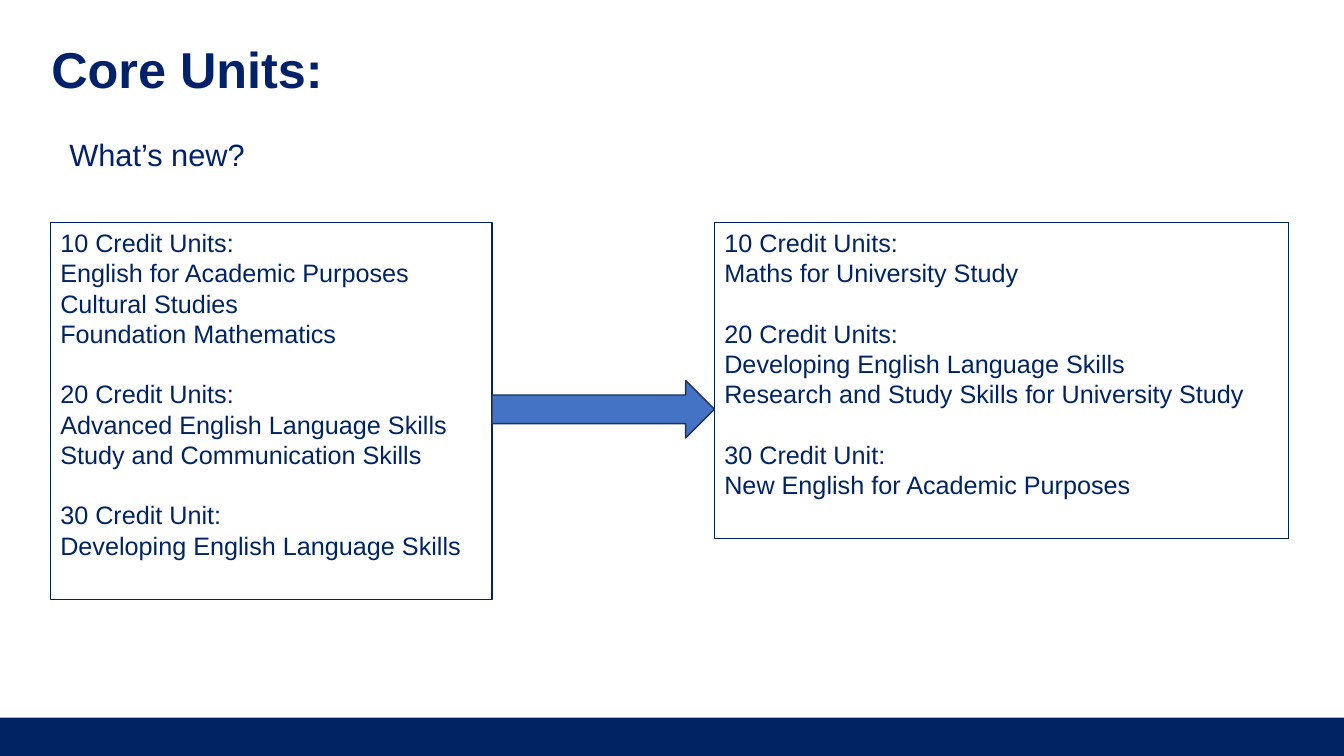
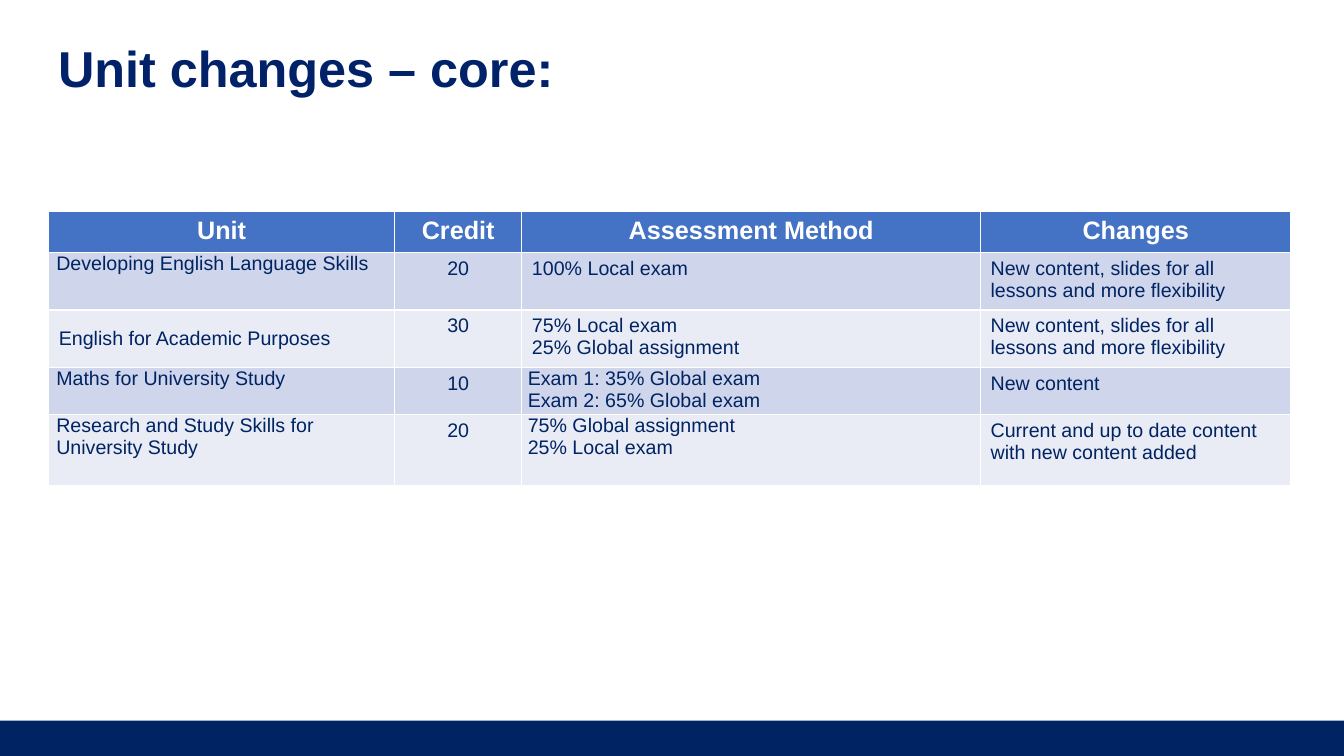
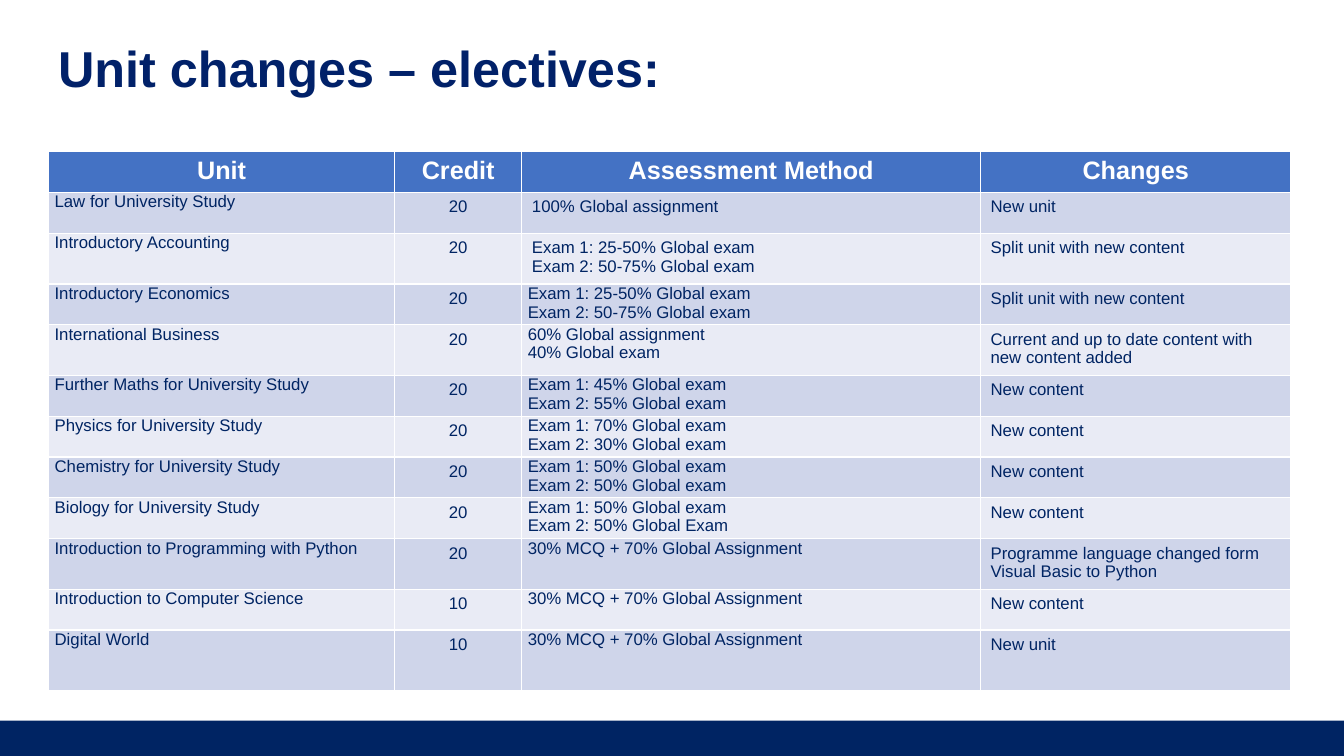
"""Build three slides on unit changes: core overview, core table, electives table."""
from dataclasses import dataclass

from pptx import Presentation
from pptx.dml.color import RGBColor as RGB
from pptx.enum.shapes import MSO_SHAPE as SHAPE
from pptx.enum.text import MSO_ANCHOR as ANCHOR, PP_ALIGN as ALIGN
from pptx.util import Pt


@dataclass(frozen=True)
class Theme:
    font: str = "Arial"
    title_ink: RGB = RGB(0x01, 0x21, 0x69)
    navy: RGB = RGB(0x00, 0x24, 0x63)
    blue: RGB = RGB(0x44, 0x72, 0xC4)
    arrow_edge: RGB = RGB(0x1E, 0x32, 0x56)
    stripes: tuple = (RGB(0xCF, 0xD5, 0xEA), RGB(0xE9, 0xEB, 0xF5))
    white: RGB = RGB(0xFF, 0xFF, 0xFF)
    title_size: int = 36
    question_size: int = 22
    body_size: int = 18
    line_pitch: float = 21.6


THEME = Theme()
WIDTH, HEIGHT = 960, 540

OLD_UNITS = [
    ("10 Credit Units:", "English for Academic Purposes", "Cultural Studies",
     "Foundation Mathematics"),
    ("20 Credit Units:", "Advanced English Language Skills",
     "Study and Communication Skills"),
    ("30 Credit Unit:", "Developing English Language Skills"),
]
NEW_UNITS = [
    ("10 Credit Units:", "Maths for University Study"),
    ("20 Credit Units:", "Developing English Language Skills",
     "Research and Study Skills for University Study"),
    ("30 Credit Unit:", "New English for Academic Purposes"),
]
UNIT_BOXES = [(OLD_UNITS, (36, 159, 315.5, 269.3)), (NEW_UNITS, (510.3, 159, 410.2, 225.4))]

HEADINGS = ("Unit", "Credit", "Assessment Method", "Changes")
COLUMN_WIDTHS = (247, 91, 327.6, 221.8)
SPLIT_EXAM = "Exam 1: 25-50% Global exam\nExam 2: 50-75% Global exam"
HALF_EXAM = "Exam 1: 50% Global exam\nExam 2: 50% Global exam"
MCQ = "30% MCQ + 70% Global Assignment"
FLEXIBLE = "New content, slides for all lessons and more flexibility"
UPDATED = "Current and up to date content with new content added"

CORE = [
    ("Developing English Language Skills", "20", "100% Local exam", FLEXIBLE),
    ("English for Academic Purposes", "30", "75% Local exam\n25% Global assignment", FLEXIBLE),
    ("Maths for University Study", "10",
     "Exam 1: 35% Global exam\nExam 2: 65% Global exam", "New content"),
    ("Research and Study Skills for University Study", "20",
     "75% Global assignment\n25% Local exam", UPDATED),
]
ELECTIVES = [
    ("Law for University Study", "20", "100% Global assignment", "New unit"),
    ("Introductory Accounting", "20", SPLIT_EXAM, "Split unit with new content"),
    ("Introductory Economics", "20", SPLIT_EXAM, "Split unit with new content"),
    ("International Business", "20", "60% Global assignment\n40% Global exam", UPDATED),
    ("Further Maths for University Study", "20",
     "Exam 1: 45% Global exam\nExam 2: 55% Global exam", "New content"),
    ("Physics for University Study", "20",
     "Exam 1: 70% Global exam\nExam 2: 30% Global exam", "New content"),
    ("Chemistry for University Study", "20", HALF_EXAM, "New content"),
    ("Biology for University Study", "20",
     "Exam 1: 50% Global exam\nExam 2: 50% Global Exam", "New content"),
    ("Introduction to Programming with Python", "20", MCQ,
     "Programme language changed form Visual Basic to Python"),
    ("Introduction to Computer Science", "10", MCQ, "New content"),
    ("Digital World", "10", MCQ, "New unit"),
]
SHORT, TALL = 29.2, 35.9
TABLES = [
    dict(title="Unit changes – core:", units=CORE, top=151, size=14, unit_inset=5.4,
         heights=(SHORT, 41.2, 41.2, 33.6, 50.6), centred_units={2}),
    dict(title="Unit changes – electives:", units=ELECTIVES, top=108.4, size=12, unit_inset=4.2,
         heights=(SHORT, SHORT, TALL, SHORT, TALL, *[SHORT] * 4, TALL, SHORT, 43.5),
         centred_units=set()),
]
ROOMY_METHOD_ROWS = {0, 1, 2}


def style(frame, size, color, bold=False, align=ALIGN.LEFT):
    for paragraph in frame.paragraphs:
        paragraph.alignment = align
        for run in paragraph.runs:
            font = run.font
            font.name, font.size, font.bold = THEME.font, Pt(size), bold
            font.color.rgb = color


def add_label(slide, text, box, size, bold=False):
    frame = slide.shapes.add_textbox(*map(Pt, box)).text_frame
    frame.word_wrap = True
    frame.text = text
    style(frame, size, THEME.title_ink, bold)


def add_block(slide, kind, box, fill=None, edge=None, edge_width=1):
    block = slide.shapes.add_shape(kind, *map(Pt, box))
    block.shadow.inherit = False
    if fill is None:
        block.fill.background()
    else:
        block.fill.solid()
        block.fill.fore_color.rgb = fill
    if edge is None:
        block.line.fill.background()
    else:
        block.line.color.rgb = edge
        block.line.width = Pt(edge_width)
    return block


def add_page(deck, title, title_left, title_top, band_top):
    slide = deck.slides.add_slide(deck.slide_layouts[6])
    add_block(slide, SHAPE.RECTANGLE, (0, band_top, WIDTH, HEIGHT - band_top), THEME.navy)
    add_label(slide, title, (title_left, title_top, 760, 51), THEME.title_size, True)
    return slide


def add_unit_box(slide, groups, box):
    frame = add_block(slide, SHAPE.RECTANGLE, box, edge=THEME.navy, edge_width=0.75).text_frame
    frame.word_wrap = True
    frame.vertical_anchor = ANCHOR.TOP
    frame.text = "\n".join(line for group in groups for line in group)
    style(frame, THEME.body_size, THEME.navy)
    later_headings = {group[0] for group in groups[1:]}
    for paragraph in frame.paragraphs:
        paragraph.line_spacing = Pt(THEME.line_pitch)
        if paragraph.text in later_headings:
            paragraph.space_before = Pt(THEME.line_pitch)


def set_insets(cell, side, upright):
    cell.margin_left = cell.margin_right = Pt(side)
    cell.margin_top = cell.margin_bottom = Pt(upright)


def add_unit_table(slide, units, top, size, unit_inset, heights, centred_units):
    rows = [HEADINGS, *units]
    table = slide.shapes.add_table(
        len(rows), len(HEADINGS), Pt(34.8), Pt(top),
        Pt(sum(COLUMN_WIDTHS)), Pt(sum(heights))).table
    for column, width in zip(table.columns, COLUMN_WIDTHS):
        column.width = Pt(width)
    for r, (row, height) in enumerate(zip(rows, heights)):
        table.rows[r].height = Pt(height)
        for heading, text, cell in zip(HEADINGS, row, table.rows[r].cells):
            is_head = r == 0
            cell.text_frame.text = text
            cell.fill.solid()
            cell.fill.fore_color.rgb = THEME.blue if is_head else THEME.stripes[(r - 1) % 2]
            style(cell.text_frame, THEME.body_size if is_head else size,
                  THEME.white if is_head else THEME.navy, is_head,
                  ALIGN.CENTER if is_head or heading == "Credit" else ALIGN.LEFT)
            if heading == "Unit" and r in centred_units:
                cell.vertical_anchor = ANCHOR.MIDDLE
            elif heading == "Unit" and not is_head:
                set_insets(cell, unit_inset, 0)
            elif heading == "Assessment Method" and r not in ROOMY_METHOD_ROWS:
                set_insets(cell, 4.2, 0)


def main():
    deck = Presentation()
    deck.slide_width, deck.slide_height = Pt(WIDTH), Pt(HEIGHT)

    overview = add_page(deck, "Core Units:", 29.6, 24, 512.6)
    add_label(overview, "What’s new?", (42.5, 93.6, 150, 34), THEME.question_size)
    for groups, box in UNIT_BOXES:
        add_unit_box(overview, groups, box)
    add_block(overview, SHAPE.RIGHT_ARROW, (351.5, 271.9, 158.8, 41),
              THEME.blue, THEME.arrow_edge)

    for entry in TABLES:
        details = dict(entry)
        slide = add_page(deck, details.pop("title"), 34.4, 23.2, 514.8)
        add_unit_table(slide, **details)

    deck.save("out.pptx")


if __name__ == "__main__":
    main()
